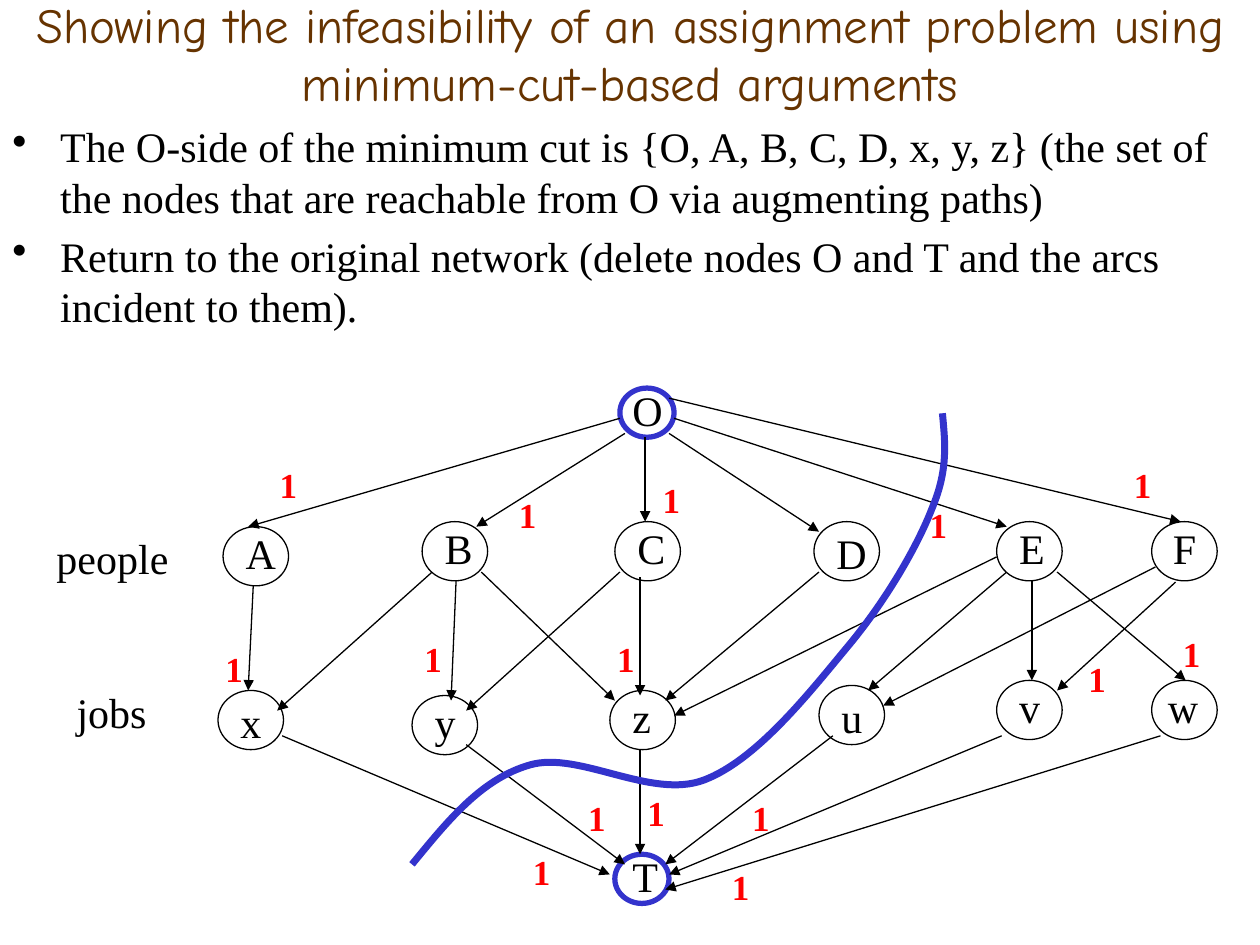
from lxml import etree
from pptx import Presentation
from pptx.dml.color import RGBColor
from pptx.enum.shapes import MSO_CONNECTOR, MSO_SHAPE
from pptx.enum.text import MSO_ANCHOR, MSO_AUTO_SIZE, PP_ALIGN
from pptx.oxml.ns import qn
from pptx.util import Inches, Pt

OVAL, LINE = MSO_SHAPE.OVAL, MSO_CONNECTOR.STRAIGHT
MIDDLE, CENTER = MSO_ANCHOR.MIDDLE, PP_ALIGN.CENTER
GROW = MSO_AUTO_SIZE.SHAPE_TO_FIT_TEXT
SERIF, COMIC = "Times New Roman", "Comic Neue"
BLACK, WHITE, RED, BLUE, BROWN = "000000", "FFFFFF", "FF0000", "3333CC", "663300"

TITLE = "Showing the infeasibility of an assignment problem using minimum-cut-based arguments"
POINTS = [
    "The O-side of the minimum cut is {O, A, B, C, D, x, y, z} "
    "(the set of the nodes that are reachable from O via augmenting paths)",
    "Return to the original network (delete nodes O and T and the arcs incident to them).",
]

# name, oval left and top, label left and top
NODES = [
    ("A", 1.77, 4.18, 1.85, 4.14), ("B", 3.35, 4.14, 3.43, 4.1),
    ("C", 4.88, 4.14, 4.96, 4.1), ("D", 6.46, 4.14, 6.54, 4.14),
    ("E", 7.91, 4.14, 7.99, 4.1), ("F", 9.14, 4.14, 9.21, 4.1),
    ("x", 1.73, 5.48, 1.81, 5.48), ("y", 3.27, 5.52, 3.35, 5.48),
    ("z", 4.84, 5.48, 4.92, 5.44), ("u", 6.5, 5.44, 6.58, 5.44),
    ("v", 7.91, 5.4, 7.99, 5.36), ("w", 9.14, 5.4, 9.17, 5.36),
]
ENDS = [("O", 4.92, 3.08, 4.92, 3), ("T", 4.88, 6.78, 4.92, 6.7)]

# x and y of the start, x and y of the arrow tip
ARCS = [
    # people to jobs
    (2.01, 4.65, 1.97, 5.48), (3.43, 4.54, 2.2, 5.64), (3.62, 4.61, 3.58, 5.56),
    (3.82, 4.54, 4.88, 5.56), (5.08, 4.58, 5.08, 5.52), (4.92, 4.54, 3.7, 5.64),
    (6.5, 4.54, 5.28, 5.56), (7.91, 4.42, 5.35, 5.68), (7.99, 4.54, 6.89, 5.48),
    (8.19, 4.61, 8.19, 5.4), (8.39, 4.54, 9.41, 5.4), (9.17, 4.5, 7.01, 5.6),
    (9.33, 4.62, 8.39, 5.48),
    # O to people
    (4.92, 3.32, 1.97, 4.18), (4.96, 3.44, 3.78, 4.18), (5.12, 3.47, 5.12, 4.14),
    (5.31, 3.44, 6.5, 4.22), (5.35, 3.32, 7.99, 4.18), (5.31, 3.16, 9.37, 4.14),
    # jobs to T
    (2.24, 5.84, 4.84, 6.94), (3.7, 5.91, 4.96, 6.86), (5.08, 5.95, 5.08, 6.78),
    (6.61, 5.84, 5.28, 6.86), (7.95, 5.84, 5.31, 6.94), (9.21, 5.84, 5.28, 7.06),
]

# left and top of each flow value
FLOWS = [
    (2.12, 3.63), (4.02, 3.87), (5.16, 3.75), (7.28, 3.95), (8.9, 3.63),
    (1.69, 5.09), (3.27, 5.01), (4.8, 5.01), (8.54, 5.17), (9.29, 4.97),
    (4.13, 6.7), (4.57, 6.27), (5.04, 6.23), (5.87, 6.27), (5.71, 6.82),
]

# start, then two control points and an end for each curve
CUT = [
    (3.27, 6.86),
    (3.55, 6.52), (3.82, 6.18), (4.21, 6.07),
    (4.6, 5.96), (5.17, 6.35), (5.59, 6.19),
    (6.01, 6.03), (6.43, 5.49), (6.73, 5.13),
    (7.03, 4.77), (7.28, 4.34), (7.4, 4.03),
    (7.53, 3.72), (7.5, 3.5), (7.48, 3.28),
]


def rgb(code):
    return RGBColor.from_string(code)


def add_run(para, text, size, color=BLACK, font=SERIF, bold=False):
    run = para.add_run()
    run.text = text
    run.font.size, run.font.name, run.font.bold = Pt(size), font, bold
    run.font.color.rgb = rgb(color)


def add_box(slide, x, y, w, h):
    box = slide.shapes.add_textbox(Inches(x), Inches(y), Inches(w), Inches(h))
    box.text_frame.word_wrap = True
    return box.text_frame


def add_label(slide, text, x, y, w=0.39, h=0.5, size=24, **style):
    frame = add_box(slide, x, y, w, h)
    frame.auto_size = GROW
    add_run(frame.paragraphs[0], text, size, **style)


def add_title(slide):
    frame = add_box(slide, 0, 0, 10, 0.84)
    frame.vertical_anchor = MIDDLE
    para = frame.paragraphs[0]
    para.alignment = CENTER
    add_run(para, TITLE, 28, BROWN, COMIC)


def add_points(slide):
    frame = add_box(slide, 0, 0.91, 10, 6.59)
    for i, text in enumerate(POINTS):
        para = frame.add_paragraph() if i else frame.paragraphs[0]
        para.space_before = Pt(4.8)
        props = para._p.get_or_add_pPr()
        props.set("marL", str(Inches(0.38)))
        props.set("indent", str(-Inches(0.38)))
        etree.SubElement(props, qn("a:buChar"), char="•")
        add_run(para, text, 24)


def add_node(slide, node, w=0.52, h=0.47, color=BLACK, width=0.75):
    name, x, y, left, top = node
    oval = slide.shapes.add_shape(OVAL, Inches(x), Inches(y), Inches(w), Inches(h))
    oval.shadow.inherit = False
    oval.fill.solid()
    oval.fill.fore_color.rgb = rgb(WHITE)
    oval.line.color.rgb = rgb(color)
    oval.line.width = Pt(width)
    add_label(slide, name, left, top)


def add_arc(slide, ends):
    arc = slide.shapes.add_connector(LINE, *map(Inches, ends))
    arc.line.color.rgb = rgb(BLACK)
    arc.line.width = Pt(0.75)
    etree.SubElement(arc.line._get_or_add_ln(), qn("a:tailEnd"), type="triangle")
    etree.SubElement(arc._element.spPr, qn("a:effectLst"))


def add_cut(slide):
    spots = [(Inches(x), Inches(y)) for x, y in CUT]
    pen = slide.shapes.build_freeform(*spots[0])
    pen.add_line_segments(spots[1:], close=False)
    cut = pen.convert_to_shape()
    cut.shadow.inherit = False
    cut.fill.background()
    cut.line.color.rgb = rgb(BLUE)
    cut.line.width = Pt(4)
    # Turn every three segments into one cubic curve
    track = cut._element.find(".//" + qn("a:path"))
    steps = track.findall(qn("a:lnTo"))
    for i in range(0, len(steps), 3):
        curve = etree.SubElement(track, qn("a:cubicBezTo"))
        for step in steps[i:i + 3]:
            curve.append(step[0])
            track.remove(step)


def main():
    deck = Presentation()
    deck.slide_width, deck.slide_height = Inches(10), Inches(7.5)
    slide = deck.slides.add_slide(deck.slide_layouts[6])

    # Heading and bullets
    add_title(slide)
    add_points(slide)

    # Network
    for node in NODES:
        add_node(slide, node)
    for node in ENDS:
        add_node(slide, node, 0.43, 0.39, BLUE, 3)
    for ends in ARCS:
        add_arc(slide, ends)

    # Row names and flow values
    add_label(slide, "people", 0.35, 4.18, 1.34)
    add_label(slide, "jobs", 0.51, 5.4, 0.87)
    for x, y in FLOWS:
        add_label(slide, "1", x, y, 0.32, 0.43, 20, color=RED, bold=True)

    # Minimum cut
    add_cut(slide)
    deck.save("out.pptx")


if __name__ == "__main__":
    main()
